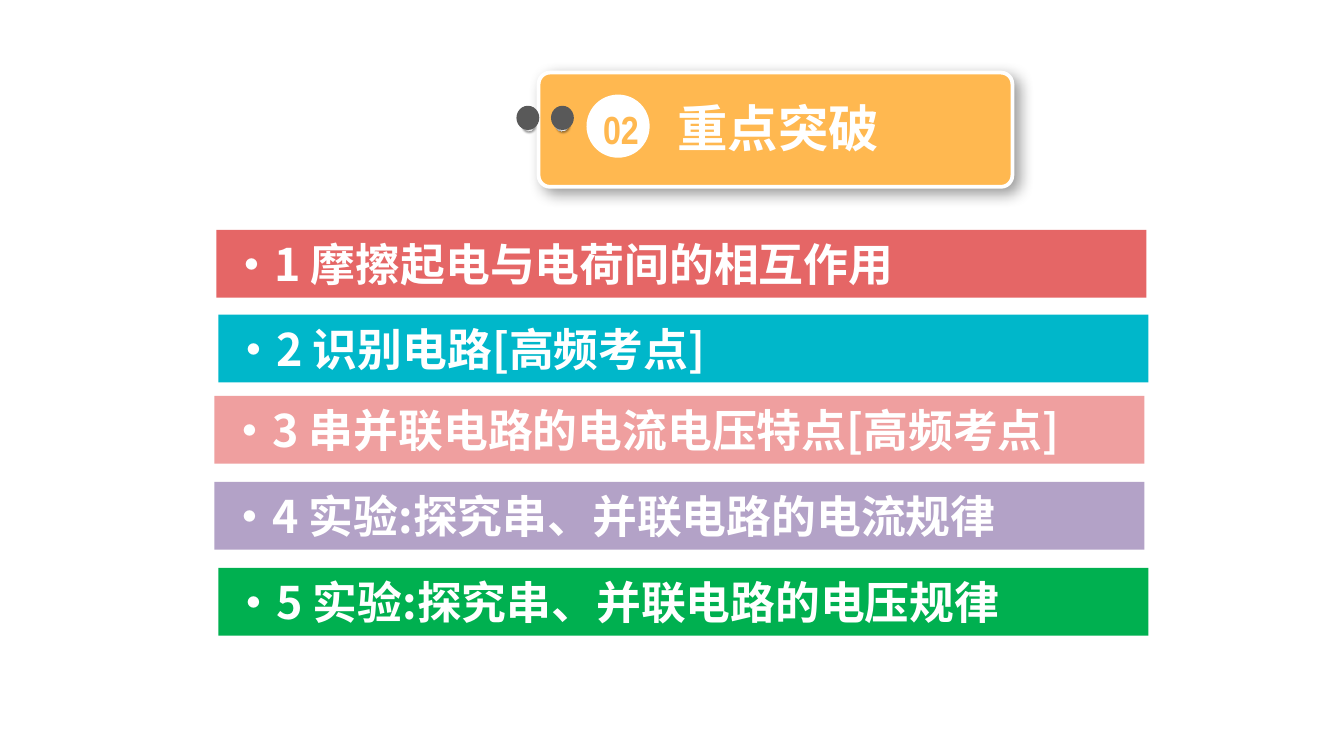
from dataclasses import dataclass

from lxml.etree import SubElement
from pptx import Presentation
from pptx.dml.color import RGBColor
from pptx.enum.lang import MSO_LANGUAGE_ID
from pptx.enum.shapes import MSO_SHAPE
from pptx.enum.text import MSO_ANCHOR, PP_ALIGN
from pptx.oxml.ns import qn
from pptx.util import Inches, Pt


@dataclass(frozen=True)
class Theme:
    accent: str = "FFB850"
    light: str = "FFFFFF"
    hole: str = "595959"
    chrome: tuple = ((0, "FFFFFF"), (17, "A6A6A6"), (35, "F2F2F2"),
                     (55, "A6A6A6"), (75, "F2F2F2"), (100, "A6A6A6"))
    cjk: str = "Noto Sans CJK SC"
    narrow: str = "Arial Narrow"
    title_size: int = 27
    number_size: int = 21
    topic_size: int = 24


theme = Theme()
COLUMNS = 100

prs = Presentation()
prs.slide_width = Inches(10)
prs.slide_height = prs.slide_width * 9 // 16
column = row = prs.slide_width / COLUMNS
slide = prs.slides.add_slide(prs.slide_layouts[6])
badge = slide.shapes.add_group_shape()


def add_block(shapes, kind, left, top, width, height, fill=None, shadow=None):
    """Place a shape by grid columns and rows; shadow is (blur, distance) in points."""
    block = shapes.add_shape(kind, round(left * column), round(top * row),
                             round(width * column), round(height * row))
    block.shadow.inherit = False
    block.line.fill.background()
    if fill:
        block.fill.solid()
        block.fill.fore_color.rgb = RGBColor.from_string(fill)
    else:
        block.fill.background()
    if shadow:
        blur, distance = shadow
        effects = block._element.spPr.find(qn("a:effectLst"))
        outer = SubElement(effects, qn("a:outerShdw"), blurRad=str(Pt(blur)),
                           dist=str(Pt(distance)), dir="2700000", algn="tl", rotWithShape="0")
        black = SubElement(outer, qn("a:srgbClr"), val="000000")
        SubElement(black, qn("a:alpha"), val="40000")
    return block


def write(block, text, size, font=theme.cjk, color=theme.light,
          align=PP_ALIGN.LEFT, anchor=MSO_ANCHOR.TOP):
    frame = block.text_frame
    frame.word_wrap = True
    frame.vertical_anchor = anchor
    paragraph = frame.paragraphs[0]
    paragraph.alignment = align
    run = paragraph.add_run()
    run.text = text
    run.font.size, run.font.bold, run.font.name = Pt(size), True, font
    run.font.color.rgb = RGBColor.from_string(color)
    run.font.language_id = MSO_LANGUAGE_ID.SIMPLIFIED_CHINESE
    SubElement(run._r.rPr, qn("a:ea"), typeface=font)


# Section badge
plate = add_block(badge.shapes, MSO_SHAPE.ROUNDED_RECTANGLE, 40.08, 5.4, 35.25, 8.5,
                  theme.accent, shadow=(8, 4))
plate.adjustments[0] = 0.1
plate.line.color.rgb = RGBColor.from_string(theme.light)
plate.line.width = Pt(2)

for ring_left, hole_left in ((41.3, 41), (38.8, 38.43)):
    ring = add_block(badge.shapes, MSO_SHAPE.OVAL, ring_left, 8.75, 1, 1, shadow=(1, 1))
    ring.rotation = 270
    ring.fill.gradient()
    ring.fill.gradient_angle = 315
    stops = ring._element.spPr.find(qn("a:gradFill")).find(qn("a:gsLst"))
    stops.clear()
    for percent, color in theme.chrome:
        stop = SubElement(stops, qn("a:gs"), pos=str(percent * 1000))
        SubElement(stop, qn("a:srgbClr"), val=color)
    add_block(badge.shapes, MSO_SHAPE.OVAL, hole_left, 7.87, 1.7, 1.8, theme.hole)

section_title = add_block(badge.shapes, MSO_SHAPE.RECTANGLE, 45.5, 6.74, 24.8, 5.6)
write(section_title, "重点突破", theme.title_size, align=PP_ALIGN.CENTER)
add_block(badge.shapes, MSO_SHAPE.OVAL, 43.64, 7.04, 4.7, 4.7, theme.light)
section_number = add_block(badge.shapes, MSO_SHAPE.RECTANGLE, 43.4, 7.34, 5.6, 4.5)
write(section_number, "02", theme.number_size, font=theme.narrow,
      color=theme.accent, align=PP_ALIGN.CENTER)

# Topic bars: left, top, colour, wording
topics = (
    (16.1, 17.1, "E56666", "摩擦起电与电荷间的相互作用"),
    (16.24, 23.4, "00B7CA", "识别电路[高频考点]"),
    (15.95, 29.45, "EF9F9F", "串并联电路的电流电压特点[高频考点]"),
    (15.95, 35.85, "B3A2C7", "实验:探究串、并联电路的电流规律"),
    (16.24, 42.25, "00B050", "实验:探究串、并联电路的电压规律"),
)
for number, (left, top, color, wording) in enumerate(topics, start=1):
    bar = add_block(slide.shapes, MSO_SHAPE.RECTANGLE, left, top, 69.2, 5.05, color)
    write(bar, f"·{number} {wording}", theme.topic_size, anchor=MSO_ANCHOR.MIDDLE)

prs.save("out.pptx")
